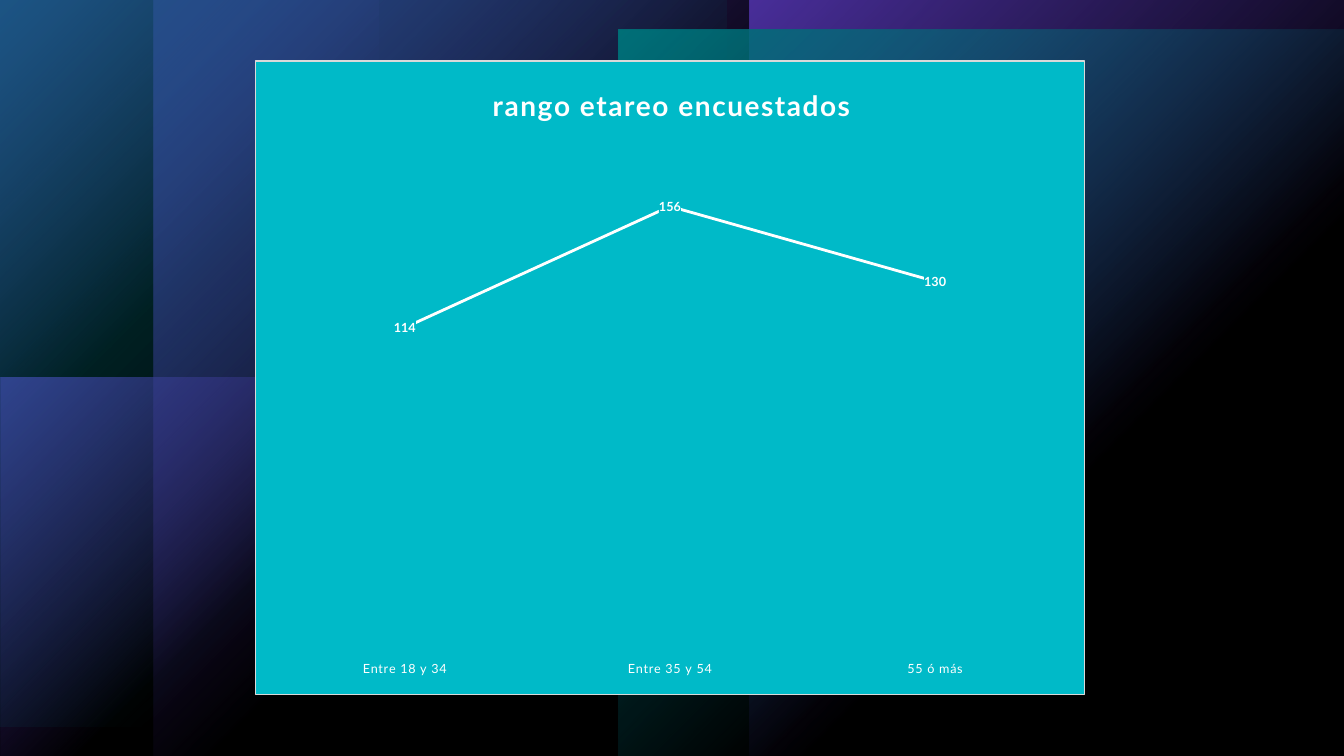
from dataclasses import dataclass

from lxml import etree
from pptx import Presentation, util as u
from pptx.chart.data import CategoryChartData
from pptx.dml.color import RGBColor
from pptx.enum import chart as ch, shapes
from pptx.oxml import parse_xml
from pptx.oxml.ns import nsdecls, qn


@dataclass(frozen=True)
class Theme:
    font: str = "Lato"
    black: str = "000000"
    white: str = "FFFFFF"
    purple: str = "794DFF"
    teal: str = "00BAC8"
    border: str = "D9D9D9"
    title: int = 20
    body: int = 10
    label: int = 9


def rgb(color):
    return RGBColor.from_string(color)


class Deck:
    def __init__(self, theme):
        self.theme = theme
        self.prs = Presentation()
        self.prs.slide_width = u.Inches(13.33)
        self.prs.slide_height = u.Inches(7.5)
        self.s = self.prs.slides.add_slide(self.prs.slide_layouts[6])
        self.s.background.fill.solid()
        self.s.background.fill.fore_color.rgb = rgb(theme.black)

    def panel(self, box, color, alpha, rot=0, flip=False):
        sp = self.s.shapes.add_shape(shapes.MSO_SHAPE.RECTANGLE, *map(u.Inches, box))
        sp.shadow.inherit = False
        sp.line.fill.background()
        sp.rotation = rot
        if flip:
            sp._element.spPr.find(qn("a:xfrm")).set("flipH", "1")
        sp.fill.solid()
        sp.fill.fore_color.rgb = rgb(color)
        clr = sp._element.spPr.find(qn("a:solidFill"))[0]
        etree.SubElement(clr, qn("a:alpha")).set("val", str(alpha * 1000))
        return sp

    def glow(self, box, color, alpha=100, rot=0, flip=False):
        sp = self.panel(box, color, alpha, rot, flip)
        stops = "".join(
            f'<a:gs pos="{pos * 1000}"><a:srgbClr val="{color}">'
            f'<a:alpha val="{a * 1000}"/></a:srgbClr></a:gs>'
            for pos, a in ((0, alpha), (60, 0)))
        grad = parse_xml(
            f'<a:gradFill {nsdecls("a")} rotWithShape="1"><a:gsLst>{stops}</a:gsLst>'
            '<a:path path="circle"><a:fillToRect r="100000" b="100000"/></a:path>'
            '</a:gradFill>')
        spPr = sp._element.spPr
        spPr.replace(spPr.find(qn("a:solidFill")), grad)

    def style_font(self, font, size, bold=False):
        font.name = self.theme.font
        font.size = u.Pt(size)
        font.bold = bold
        font.color.rgb = rgb(self.theme.white)

    def chart_box(self, color, border=None):
        line = "<a:noFill/>"
        if border:
            line = f'<a:solidFill><a:srgbClr val="{border}"/></a:solidFill>'
        return parse_xml(
            f'<c:spPr {nsdecls("c", "a")}><a:solidFill><a:srgbClr val="{color}"/></a:solidFill>'
            f'<a:ln w="9525">{line}</a:ln></c:spPr>')

    def layout(self, inner=False, **places):
        target = '<c:layoutTarget val="inner"/>' if inner else ""
        modes = "".join(f'<c:{k}Mode val="edge"/>' for k in places if k in "xy")
        values = "".join(f'<c:{k} val="{v}"/>' for k, v in places.items())
        return parse_xml(
            f'<c:layout {nsdecls("c")}><c:manualLayout>{target}{modes}{values}'
            '</c:manualLayout></c:layout>')

    def line_chart(self, box, title, cats, vals):
        t = self.theme
        data = CategoryChartData(number_format="###0")
        data.categories = cats
        data.add_series("Series 1", vals)
        chart = self.s.shapes.add_chart(
            ch.XL_CHART_TYPE.LINE, *map(u.Inches, box), data).chart
        self.style_font(chart.font, t.body)
        chart.has_legend = False
        chart._chartSpace.chart.addnext(self.chart_box(t.teal, t.border))
        plot_area = chart._chartSpace.chart.plotArea
        for old in plot_area.findall(qn("c:layout")):
            plot_area.remove(old)
        plot_area.insert(0, self.layout(True, x=0.02, y=0.12, w=0.96, h=0.82))

        chart.has_title = True
        tf = chart.chart_title.text_frame
        tf.text = title
        r = tf.paragraphs[0].runs[0]
        self.style_font(r.font, t.title, True)
        r._r.get_or_add_rPr().set("spc", "100")
        title_xml = chart.chart_title._element
        for old in title_xml.findall(qn("c:layout")):
            title_xml.remove(old)
        title_xml.find(qn("c:tx")).addnext(self.layout(x=0.28, y=0.03))
        chart.chart_title.include_in_layout = False

        axis = chart.category_axis
        axis.major_tick_mark = ch.XL_TICK_MARK.NONE
        axis.format.line.fill.background()
        self.style_font(axis.tick_labels.font, t.label)
        axis.tick_labels.font._element.set("spc", "50")
        values = chart.value_axis
        values.visible = False
        values.has_major_gridlines = False
        values.minimum_scale, values.maximum_scale = 0, 180

        plot = chart.plots[0]
        plot.vary_by_categories = False
        series = plot.series[0]
        series.smooth = False
        series.marker.style = ch.XL_MARKER_STYLE.NONE
        series.format.line.color.rgb = rgb(t.white)
        series.format.line.width = u.Pt(2)
        labels = series.data_labels
        labels.show_value = True
        labels.position = ch.XL_LABEL_POSITION.CENTER
        labels.number_format = "###0"
        labels.number_format_is_linked = False
        self.style_font(labels.font, t.label, True)
        labels._element.find(qn("c:numFmt")).addnext(self.chart_box(t.teal))


def main():
    t = Theme()
    deck = Deck(t)
    for left, flip in ((1.52, False), (7.43, True)):
        deck.glow((left, 0, 5.91, 7.5), t.purple, rot=180, flip=flip)
    for top, flip in ((3.75, True), (0, False)):
        deck.glow((0, top, 3.75, 3.75), t.purple, rot=270, flip=flip)
    deck.glow((6.13, 0.29, 7.21, 7.21), t.teal, rot=180)
    deck.glow((0, 0, 7.21, 7.21), t.teal, alpha=60)
    deck.panel((0, 0, 13.33, 7.5), t.black, 40)
    deck.line_chart((2.53, 0.6, 8.23, 6.3), "rango etareo encuestados",
                    ("Entre 18 y 34", "Entre 35 y 54", "55 ó más"), (114, 156, 130))
    deck.prs.save("out.pptx")


if __name__ == "__main__":
    main()
